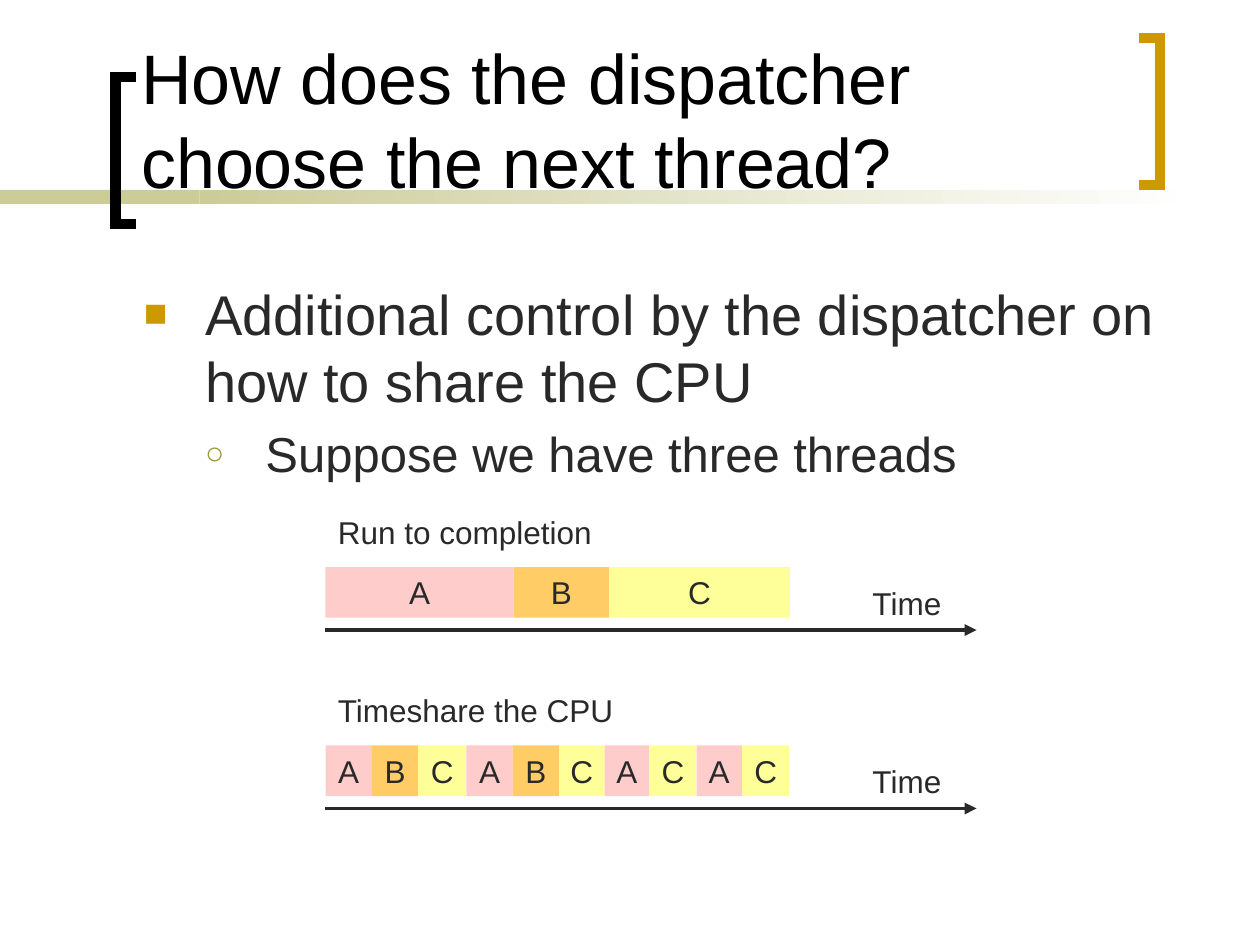
from lxml.etree import SubElement
from pptx import Presentation
from pptx.dml.color import RGBColor
from pptx.enum.shapes import MSO_CONNECTOR, MSO_SHAPE
from pptx.enum.text import MSO_ANCHOR, PP_ALIGN
from pptx.oxml.ns import qn
from pptx.util import Pt

BLACK = RGBColor(0x00, 0x00, 0x00)
DARK = RGBColor(0x29, 0x29, 0x29)
GOLD = RGBColor(0xCC, 0x99, 0x00)
OLIVE = RGBColor(0x99, 0x99, 0x33)
SAGE = RGBColor(0xCC, 0xCC, 0x99)
WHITE = RGBColor(0xFF, 0xFF, 0xFF)
THREAD_COLORS = {
    "A": RGBColor(0xFF, 0xCC, 0xCC),
    "B": RGBColor(0xFF, 0xCC, 0x66),
    "C": RGBColor(0xFF, 0xFF, 0x99),
}

TITLE = "How does the dispatcher choose the next thread?"
# text, level, size, indent, hanging, bullet, bullet colour, bullet size in percent
BULLETS = [
    ("Additional control by the dispatcher on how to share the CPU",
     0, 32, 35, 35, "■", GOLD, 70),
    ("Suppose we have three threads", 1, 28, 69.5, 34.5, "○", OLIVE, 65),
]
# label, label width, top, threads with the width of their time slice
TIMELINES = [
    ("Run to completion", 160, 289.5, [("A", 107.5), ("B", 54.5), ("C", 103.5)]),
    ("Timeshare the CPU", 173, 391.5,
     [("A", 26.5), ("B", 26.5), ("C", 27.5), ("A", 26.5), ("B", 26.5),
      ("C", 26), ("A", 25.5), ("C", 27), ("A", 26), ("C", 27)]),
]
# tip x, spine x, top, colour
BRACKETS = [(78, 66, 44, BLACK), (651, 663, 21.75, GOLD)]

BRACKET_HEIGHT = 84
BAND_TOP, BAND_HEIGHT, BAND_SPLIT, BAND_END = 108.5, 8, 114, 684
TIMELINE_LEFT, TIMELINE_RIGHT = 186, 558
TIME_LEFT, TIME_WIDTH, BOX_HEIGHT = 491.5, 55, 29
SLICE_OFFSET, TIME_OFFSET, AXIS_OFFSET = 34.5, 40.5, 70.5


def place(shape, left, top, width, height):
    box = {"left": left, "top": top, "width": width, "height": height}
    for name, value in box.items():
        setattr(shape, name, Pt(value))


def format_font(font, size, color=DARK):
    for name, value in {"name": "Arial", "size": Pt(size)}.items():
        setattr(font, name, value)
    font.color.rgb = color


def add_rectangle(shapes, left, top, width, height):
    rectangle = shapes.add_shape(
        MSO_SHAPE.RECTANGLE, Pt(left), Pt(top), Pt(width), Pt(height))
    rectangle.shadow.inherit = False
    rectangle.line.fill.background()
    return rectangle


def write_label(shape, text, alignment=PP_ALIGN.LEFT):
    shape.text_frame.word_wrap = False
    paragraph = shape.text_frame.paragraphs[0]
    paragraph.text = text
    paragraph.alignment = alignment
    format_font(paragraph.font, 18)


def add_label(shapes, text, left, top, width):
    box = shapes.add_textbox(Pt(left), Pt(top), Pt(width), Pt(BOX_HEIGHT))
    write_label(box, text)


def add_band(shapes):
    solid = add_rectangle(shapes, 0, BAND_TOP, BAND_SPLIT, BAND_HEIGHT)
    solid.fill.solid()
    solid.fill.fore_color.rgb = SAGE
    fading = add_rectangle(
        shapes, BAND_SPLIT, BAND_TOP, BAND_END - BAND_SPLIT, BAND_HEIGHT)
    fading.fill.gradient()
    fading.fill.gradient_angle = 0
    for stop, position, color in zip(fading.fill.gradient_stops, (0, 1), (SAGE, WHITE)):
        stop.position = position
        stop.color.rgb = color


def add_bracket(shapes, tip, spine, top, color):
    bottom = top + BRACKET_HEIGHT
    builder = shapes.build_freeform(Pt(tip), Pt(top))
    corners = [(spine, top), (spine, bottom), (tip, bottom)]
    builder.add_line_segments([(Pt(x), Pt(y)) for x, y in corners], close=False)
    bracket = builder.convert_to_shape()
    bracket.shadow.inherit = False
    bracket.fill.background()
    bracket.line.color.rgb = color
    bracket.line.width = Pt(6)
    SubElement(bracket.line._get_or_add_ln(), qn("a:miter"), lim="800000")


def add_axis(shapes, y):
    axis = shapes.add_connector(
        MSO_CONNECTOR.STRAIGHT, Pt(TIMELINE_LEFT), Pt(y), Pt(TIMELINE_RIGHT), Pt(y))
    axis.line.color.rgb = DARK
    axis.line.width = Pt(2.25)
    SubElement(axis.line._get_or_add_ln(), qn("a:tailEnd"), type="triangle")
    SubElement(axis._element.spPr, qn("a:effectLst"))


def add_timeline(shapes, label, label_width, top, slices):
    left = TIMELINE_LEFT
    for thread, width in slices:
        block = add_rectangle(shapes, left, top + SLICE_OFFSET, width, BOX_HEIGHT)
        block.fill.solid()
        block.fill.fore_color.rgb = THREAD_COLORS[thread]
        write_label(block, thread, PP_ALIGN.CENTER)
        left += width
    add_axis(shapes, top + AXIS_OFFSET)
    add_label(shapes, "Time", TIME_LEFT, top + TIME_OFFSET, TIME_WIDTH)
    add_label(shapes, label, TIMELINE_LEFT, top, label_width)


def add_bullet(paragraph, text, level, size, indent, hanging, bullet, color, percent):
    paragraph.text = text
    paragraph.level = level
    paragraph.space_before = Pt(size * 0.2)
    format_font(paragraph.runs[0].font, size)
    properties = paragraph._p.get_or_add_pPr()
    properties.set("marL", str(Pt(indent)))
    properties.set("indent", str(-Pt(hanging)))
    bullet_color = SubElement(properties, qn("a:buClr"))
    SubElement(bullet_color, qn("a:srgbClr"), val=str(color))
    SubElement(properties, qn("a:buSzPct"), val=str(percent * 1000))
    SubElement(properties, qn("a:buFont"), typeface="Arial")
    SubElement(properties, qn("a:buChar"), char=bullet)


def main():
    presentation = Presentation()
    presentation.slide_width, presentation.slide_height = Pt(720), Pt(540)
    slide = presentation.slides.add_slide(presentation.slide_layouts[1])
    shapes = slide.shapes
    title, body = slide.placeholders

    add_band(shapes)
    for bracket in BRACKETS:
        add_bracket(shapes, *bracket)

    # The placeholders go in front of the band and the brackets.
    for placeholder in (title, body):
        shapes._spTree.append(placeholder._element)

    place(title, 73.5, 8, 564, 111.5)
    title.text_frame.text = TITLE
    title.text_frame.vertical_anchor = MSO_ANCHOR.BOTTOM
    title.text_frame.paragraphs[0].alignment = PP_ALIGN.LEFT
    format_font(title.text_frame.paragraphs[0].runs[0].font, 40, BLACK)

    place(body, 75, 156, 603, 324)
    frame = body.text_frame
    for index, bullet in enumerate(BULLETS):
        paragraph = frame.add_paragraph() if index else frame.paragraphs[0]
        add_bullet(paragraph, *bullet)

    for timeline in TIMELINES:
        add_timeline(shapes, *timeline)

    presentation.save("out.pptx")


if __name__ == "__main__":
    main()
